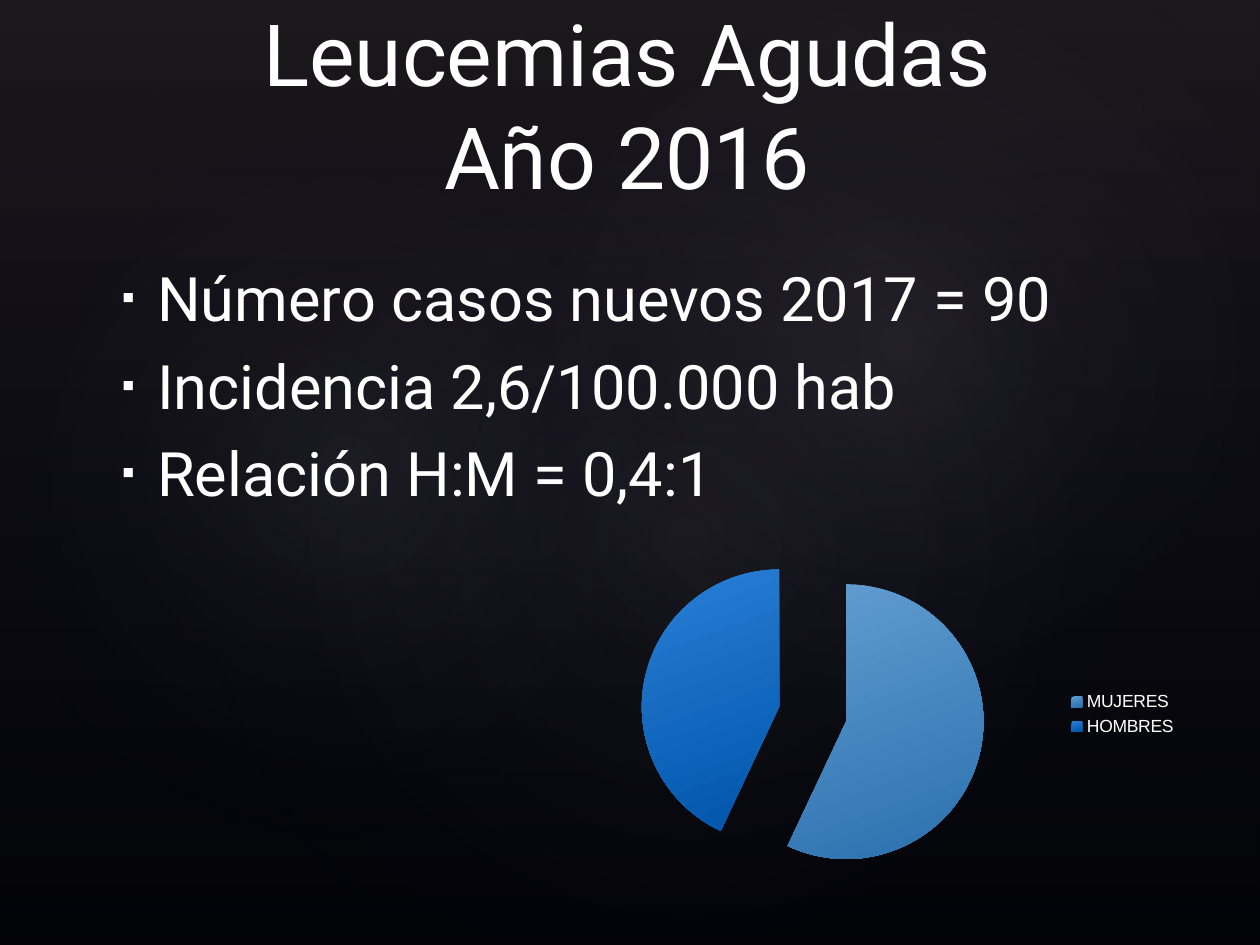
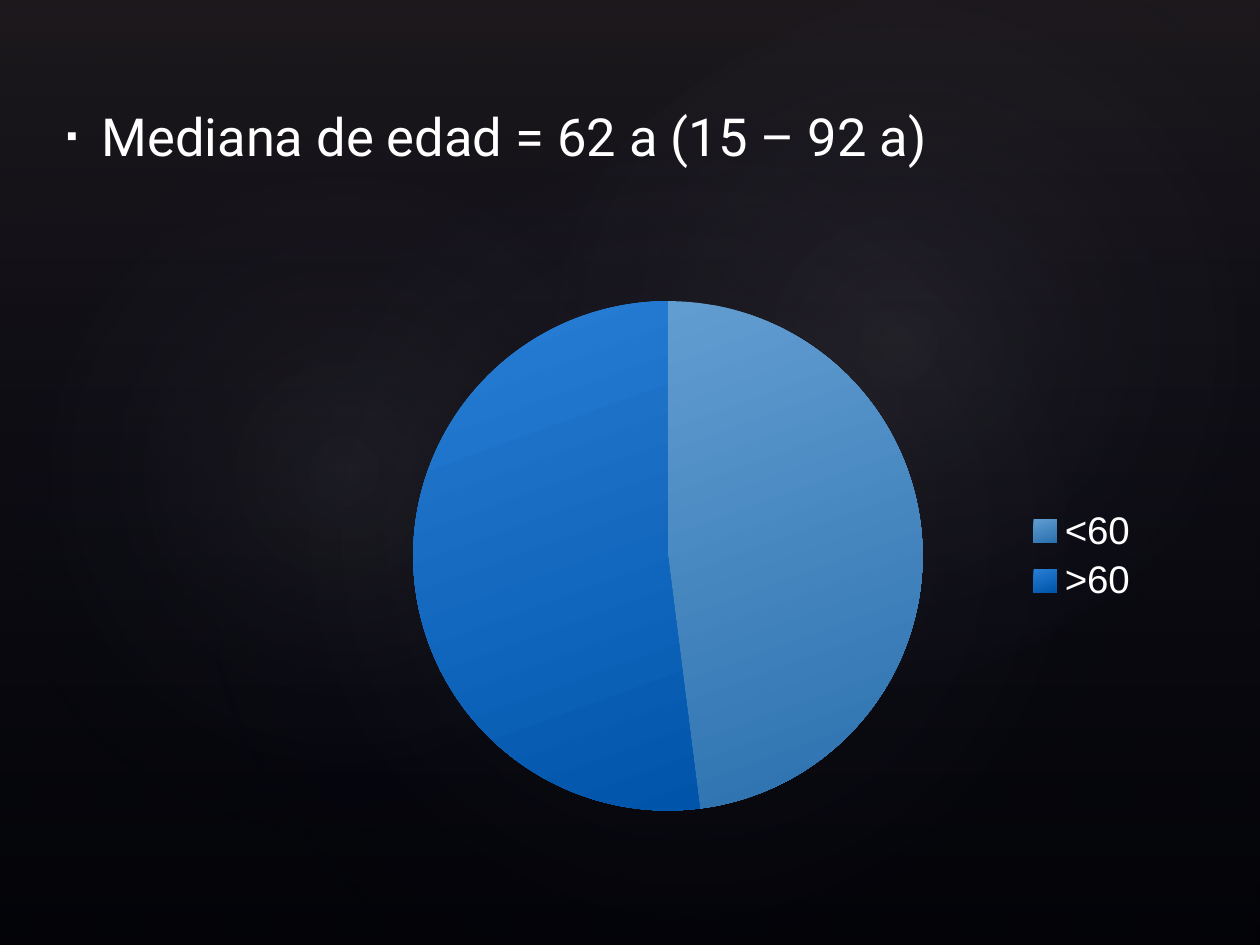
from dataclasses import dataclass

from lxml import etree
from pptx import Presentation
from pptx import util as u
from pptx.chart.data import CategoryChartData
from pptx.dml.color import RGBColor
from pptx.enum import chart as ch, shapes, text
from pptx.oxml import ns

WHITE = "FFFFFF"
BLACK = "000000"
NAVY = "242852"
FONT = "Roboto"
LEGEND_FONT = "Arial"
SLICES = (("629DD1", "2A70AE"), ("297FD5", "0055AB"))


@dataclass(frozen=True)
class Box:
    x: float
    y: float
    w: float
    h: float

    def emu(self) -> tuple:
        return u.Cm(self.x), u.Cm(self.y), u.Cm(self.w), u.Cm(self.h)


@dataclass(frozen=True)
class Stop:
    pos: float
    color: str
    alpha: int = 100


@dataclass(frozen=True)
class Glow:
    box: Box
    rotation: float
    alpha: int


@dataclass(frozen=True)
class Pie:
    box: Box
    cats: tuple
    vals: tuple
    legend_size: int
    explode: int = 0


PAGE = Box(0, 0, 25.4, 19.05)
VEIL = (Stop(0, "504652", 36), Stop(1, NAVY, 10))
GLOWS = (
    Glow(Box(3.81, 2.9, 20.12, 15.85), 328.7, 7),
    Glow(Box(-0.76, 3.25, 15.39, 12.45), 294.3, 8),
    Glow(Box(9.09, 0.33, 18.01, 13.21), 328.7, 8),
)


def rgb(color: str) -> RGBColor:
    return RGBColor.from_string(color)


def add_xml(parent, tag: str, **attrs):
    return etree.SubElement(parent, ns.qn(tag), {k: str(v) for k, v in attrs.items()})


def paint(fill, stops: tuple, angle: float = 90, radial: bool = False) -> None:
    fill.gradient()
    fill.gradient_angle = 360 - angle
    for target, stop in zip(fill.gradient_stops, stops):
        target.position = stop.pos
        target.color.rgb = rgb(stop.color)
        if stop.alpha < 100:
            add_xml(target._gs[0], "a:alpha", val=stop.alpha * 1000)
    if radial:
        grad = fill._fill._gradFill
        grad.remove(grad.find(ns.qn("a:lin")))
        circle = add_xml(grad, "a:path", path="circle")
        add_xml(circle, "a:fillToRect", **dict.fromkeys("ltrb", 50000))


def add_backdrop_shape(slide, kind, box: Box, stops: tuple, rotation: float = 0,
                       radial: bool = False) -> None:
    sp = slide.shapes.add_shape(kind, *box.emu())
    sp.shadow.inherit = False
    sp.line.fill.background()
    sp.rotation = rotation
    paint(sp.fill, stops, radial=radial)


def new_slide(prs):
    slide = prs.slides.add_slide(prs.slide_layouts[6])
    slide.background.fill.solid()
    slide.background.fill.fore_color.rgb = rgb(BLACK)
    add_backdrop_shape(slide, shapes.MSO_SHAPE.RECTANGLE, PAGE, VEIL)
    for glow in GLOWS:
        stops = (Stop(0, "C4BCC6", glow.alpha), Stop(0.58, NAVY, 0))
        add_backdrop_shape(slide, shapes.MSO_SHAPE.OVAL, glow.box, stops,
                           glow.rotation, radial=True)
    return slide


def add_text(slide, box: Box, lines: tuple, *, size: int, bullet: str = "",
             align=text.PP_ALIGN.LEFT, anchor=text.MSO_ANCHOR.MIDDLE) -> None:
    tf = slide.shapes.add_textbox(*box.emu()).text_frame
    tf.word_wrap = True
    tf.vertical_anchor = anchor
    for i, line in enumerate(lines):
        p = tf.paragraphs[0] if i == 0 else tf.add_paragraph()
        p.text = line
        p.alignment = align
        for r in p.runs:
            r.font.name = FONT
            r.font.size = u.Pt(size)
            r.font.color.rgb = rgb(WHITE)
        if bullet:
            p.space_before = u.Pt(round(size * 0.23))
            props = p._p.get_or_add_pPr()
            props.set("marL", str(u.Cm(0.76)))
            props.set("indent", str(u.Cm(-0.71)))
            add_xml(props, "a:buSzPct", val=60000)
            add_xml(props, "a:buFont", typeface=LEGEND_FONT)
            add_xml(props, "a:buChar", char=bullet)


def add_pie(slide, pie: Pie) -> None:
    data = CategoryChartData()
    data.categories = pie.cats
    data.add_series("Series 1", pie.vals)
    chart = slide.shapes.add_chart(ch.XL_CHART_TYPE.PIE, *pie.box.emu(), data).chart
    chart.has_title = False
    chart.has_legend = True
    chart.legend.position = ch.XL_LEGEND_POSITION.RIGHT
    chart.legend.include_in_layout = False
    font = chart.legend.font
    font.name = LEGEND_FONT
    font.size = u.Pt(pie.legend_size)
    font.color.rgb = rgb(WHITE)
    plot = chart.plots[0]
    plot.vary_by_categories = True
    series = plot.series[0]
    if pie.explode:
        ser = series._element
        explosion = add_xml(ser, "c:explosion", val=pie.explode)
        ser.find(ns.qn("c:tx")).addnext(explosion)
    for i, (light, dark) in enumerate(SLICES):
        fmt = series.points[i].format
        paint(fmt.fill, (Stop(0, light), Stop(1, dark)), angle=70)
        fmt.line.fill.background()


def build_incidence(prs) -> None:
    slide = new_slide(prs)
    add_text(slide, Box(2.16, 4.95, 21.31, 5.61),
             ("Número casos nuevos 2017 = 90",
              "Incidencia 2,6/100.000 hab",
              "Relación H:M = 0,4:1"), size=35, bullet="▪")
    add_text(slide, Box(2.16, 1.75, 20.96, 2.54), ("Leucemias Agudas\vAño 2016",),
             size=49, align=text.PP_ALIGN.CENTER, anchor=text.MSO_ANCHOR.BOTTOM)
    add_pie(slide, Pie(Box(11.28, 10.59, 12.7, 7.62), ("MUJERES", "HOMBRES"),
                       (57, 43), legend_size=10, explode=25))


def build_age(prs) -> None:
    slide = new_slide(prs)
    add_text(slide, Box(1.04, 0.66, 18.64, 4.14),
             ("Mediana de edad = 62 a (15 – 92 a)",), size=30, bullet="▪")
    add_pie(slide, Pie(Box(6.35, 5.72, 16.89, 10.97), ("<60", ">60"),
                       (48, 52), legend_size=22))


def main() -> None:
    prs = Presentation()
    prs.slide_width, prs.slide_height = u.Cm(PAGE.w), u.Cm(PAGE.h)
    build_incidence(prs)
    build_age(prs)
    prs.save("out.pptx")


if __name__ == "__main__":
    main()
